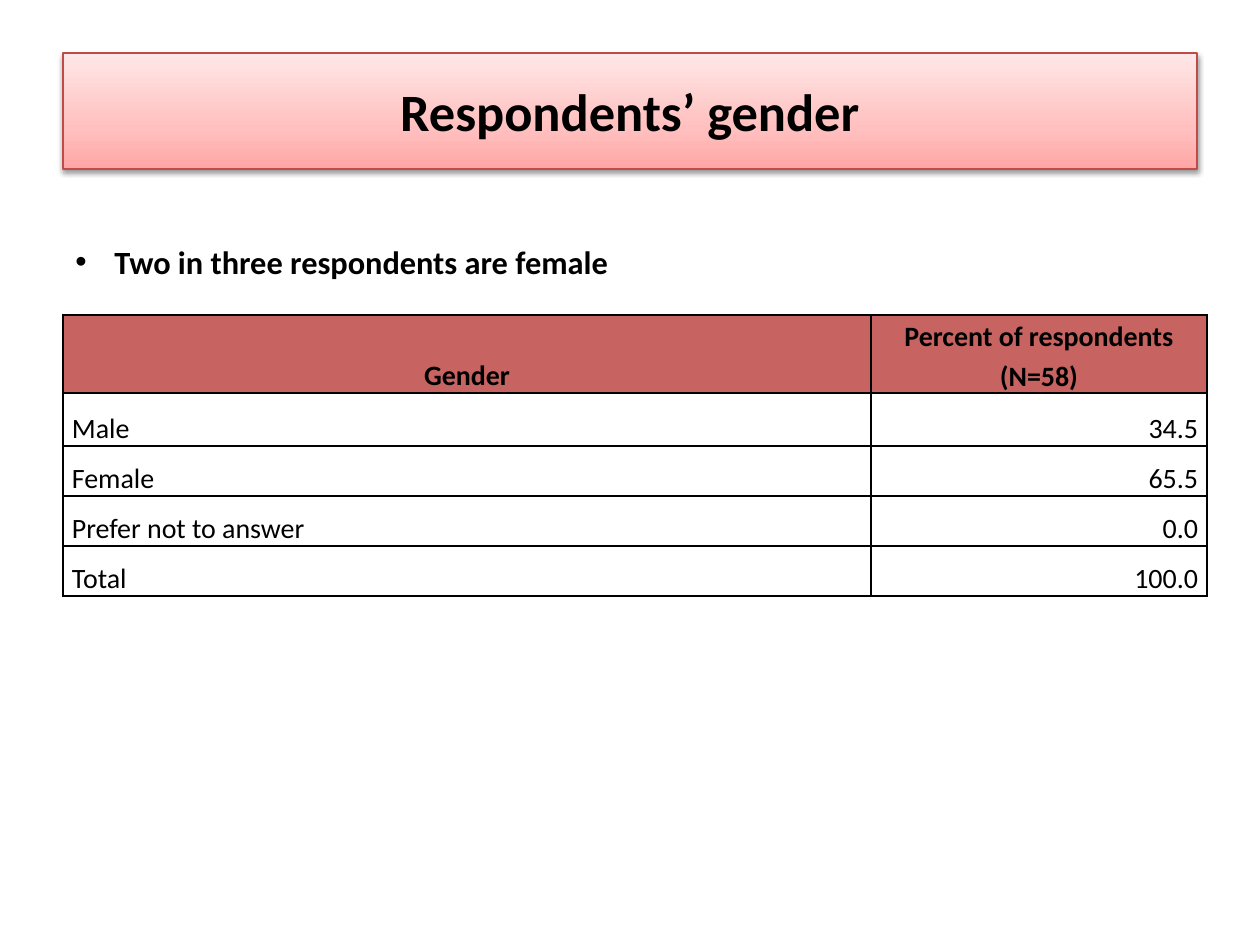
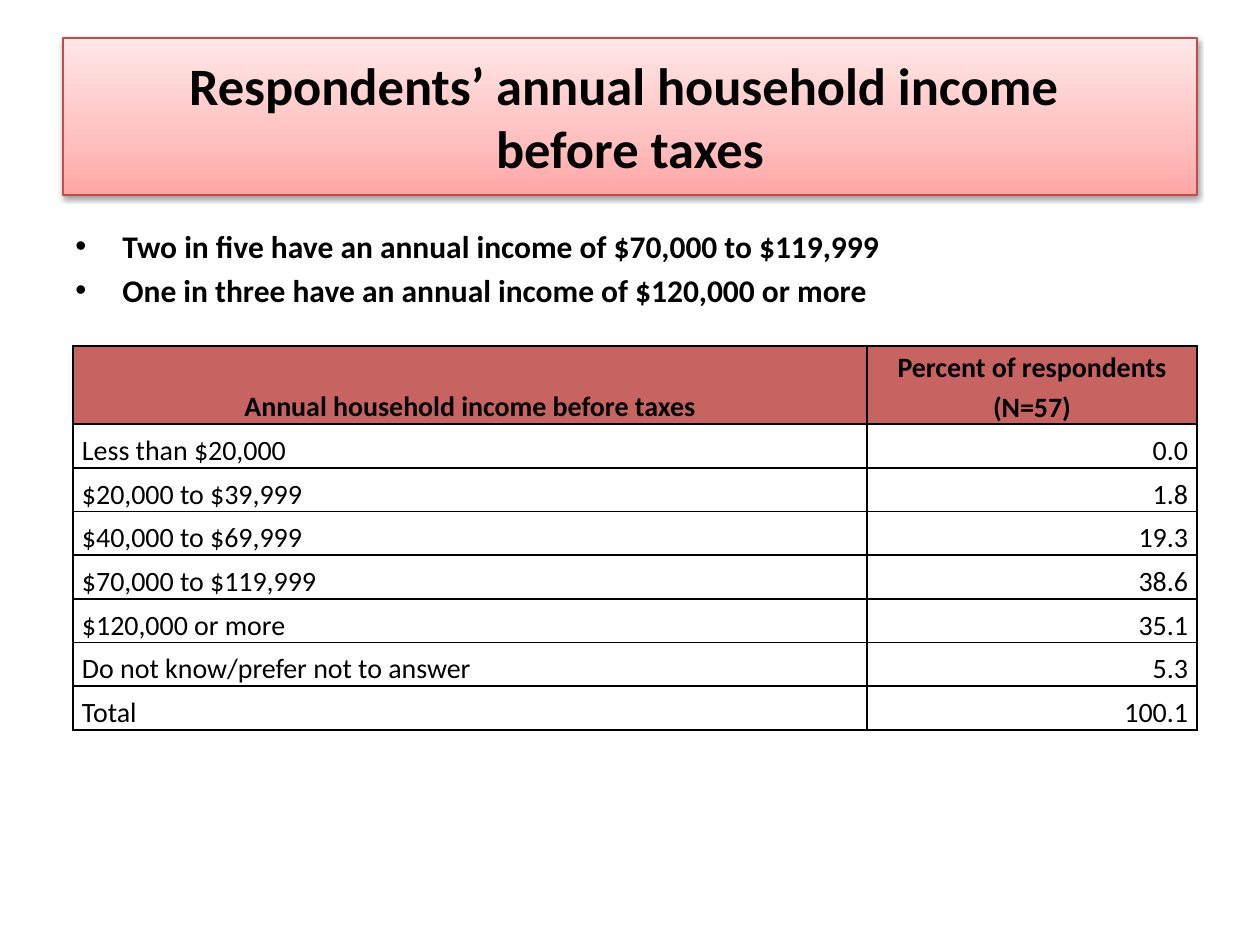
from lxml.etree import SubElement
from pptx import Presentation
from pptx.dml.color import RGBColor
from pptx.enum.text import MSO_ANCHOR, MSO_AUTO_SIZE, PP_ALIGN
from pptx.oxml.ns import qn
from pptx.util import Emu, Pt

COLORS = {
    "text": "000000",
    "page": "FFFFFF",
    "band_line": "BF4C48",
    "header": "C76361",
    "grid": "000000",
}
BAND_STOPS = [(0, "FFA6A5"), (35, "FFC0BF"), (100, "FFE7E7")]
FONT = "Calibri"
TITLE_ONLY = 5
HEADER_HEIGHT = 78


def px(length):
    """Turn px at 126 to the inch into EMU."""
    return Emu(round(length * 914400 / 126))


def color(name):
    return RGBColor.from_string(COLORS[name])


def add_element(parent, tag, **attributes):
    values = {key: str(value) for key, value in attributes.items()}
    return SubElement(parent, qn(tag), values)


def set_font(para, size, bold=False):
    para.font.name = FONT
    para.font.size = Pt(size)
    para.font.bold = bold
    para.font.color.rgb = color("text")


def style_band(shape):
    """Red gradient, thin outline and soft shadow below."""
    shape.fill.gradient()
    shape.fill.gradient_angle = 90
    properties = shape.element.spPr
    stops = properties.find(".//" + qn("a:gsLst"))
    for stop in list(stops):
        stops.remove(stop)
    for position, value in BAND_STOPS:
        stop = add_element(stops, "a:gs", pos=position * 1000)
        add_element(stop, "a:srgbClr", val=value)
    shape.line.color.rgb = color("band_line")
    shape.line.width = Pt(0.75)
    effects = add_element(properties, "a:effectLst")
    shadow = add_element(effects, "a:outerShdw", blurRad=Pt(3.1), dist=Pt(1.6),
                         dir=90 * 60000, rotWithShape=0)
    tint = add_element(shadow, "a:srgbClr", val="000000")
    add_element(tint, "a:alpha", val=38000)


def place_title(page, box, lines):
    title = page.shapes.title
    title.left, title.top, title.width, title.height = map(px, box)
    style_band(title)
    frame = title.text_frame
    frame.word_wrap = True
    frame.auto_size = MSO_AUTO_SIZE.NONE
    frame.vertical_anchor = MSO_ANCHOR.MIDDLE
    para = frame.paragraphs[0]
    para.alignment = PP_ALIGN.CENTER
    for index, line in enumerate(lines):
        if index:
            para.add_line_break()
        para.add_run().text = line
    set_font(para, 30, bold=True)


def place_findings(page, box, findings, size, indent, top_inset):
    text_box = page.shapes.add_textbox(*map(px, box))
    text_box.fill.solid()
    text_box.fill.fore_color.rgb = color("page")
    text_box.line.color.rgb = color("page")
    text_box.line.width = Pt(2)
    frame = text_box.text_frame
    frame.word_wrap = True
    frame.margin_top = px(top_inset)
    for index, finding in enumerate(findings):
        para = frame.add_paragraph() if index else frame.paragraphs[0]
        para.text = finding
        para.space_before = Pt(size * 0.2)
        set_font(para, size, bold=True)
        properties = para._p.get_or_add_pPr()
        properties.set("marL", str(px(indent)))
        properties.set("indent", str(-px(indent)))
        bullet_font = properties.makeelement(qn("a:buFont"), {"typeface": "Arial"})
        bullet = properties.makeelement(qn("a:buChar"), {"char": "•"})
        defaults = properties.find(qn("a:defRPr"))
        defaults.addprevious(bullet_font)
        defaults.addprevious(bullet)


def style_cell(cell, text, alignment, is_header):
    cell.margin_left = cell.margin_right = px(9)
    cell.margin_top = cell.margin_bottom = 0
    cell.vertical_anchor = MSO_ANCHOR.BOTTOM
    para = cell.text_frame.paragraphs[0]
    para.text = text
    para.alignment = alignment
    para.line_spacing = 1.15
    set_font(para, 16, bold=is_header)
    # Borders come before the fill in the cell properties
    properties = cell._tc.get_or_add_tcPr()
    for side in ("a:lnL", "a:lnR", "a:lnT", "a:lnB"):
        line = add_element(properties, side, w=Pt(1))
        fill = add_element(line, "a:solidFill")
        add_element(fill, "a:srgbClr", val=COLORS["grid"])
    if is_header:
        cell.fill.solid()
        cell.fill.fore_color.rgb = color("header")
    else:
        cell.fill.background()


def place_table(page, box, label_width, first_row_height, rows):
    height = box[3]
    other_height = (height - HEADER_HEIGHT - first_row_height) / (len(rows) - 2)
    table = page.shapes.add_table(len(rows), 2, *map(px, box)).table
    table.first_row = table.horz_banding = False
    table.columns[0].width = px(label_width)
    table.columns[1].width = px(box[2] - label_width)
    for index, row in enumerate(rows):
        heights = (HEADER_HEIGHT, first_row_height)
        table.rows[index].height = px(heights[index] if index < 2 else other_height)
        for column, text in enumerate(row):
            alignment = (PP_ALIGN.LEFT, PP_ALIGN.RIGHT)[column] if index else PP_ALIGN.CENTER
            style_cell(table.cell(index, column), text, alignment, index == 0)


def add_gender_page(deck):
    page = deck.slides.add_slide(deck.slide_layouts[TITLE_ONLY])
    place_title(page, (63, 53, 1134, 116), ["Respondents’ gender"])
    place_findings(page, (63, 189, 903, 95), ["Two in three respondents are female"],
                   size=18.5, indent=39, top_inset=53)
    place_table(page, (63, 315, 1144, 281), 808, 53, [
        ("Gender", "Percent of respondents (N=58)"),
        ("Male", "34.5"),
        ("Female", "65.5"),
        ("Prefer not to answer", "0.0"),
        ("Total", "100.0"),
    ])


def add_income_page(deck):
    page = deck.slides.add_slide(deck.slide_layouts[TITLE_ONLY])
    place_title(page, (63, 38, 1134, 157),
                ["Respondents’ annual household income ", "before taxes"])
    place_findings(page, (63, 221, 914, 136), [
        "Two in five have an annual income of $70,000 to $119,999",
        "One in three have an annual income of $120,000 or more",
    ], size=18, indent=47, top_inset=6)
    place_table(page, (73, 346, 1124, 384), 794, 44, [
        ("Annual household income before taxes", "Percent of respondents (N=57)"),
        ("Less than $20,000", "0.0"),
        ("$20,000 to $39,999", "1.8"),
        ("$40,000 to $69,999", "19.3"),
        ("$70,000 to $119,999", "38.6"),
        ("$120,000 or more", "35.1"),
        ("Do not know/prefer not to answer", "5.3"),
        ("Total", "100.1"),
    ])


def main():
    deck = Presentation()
    deck.slide_width, deck.slide_height = px(1260), px(945)
    add_gender_page(deck)
    add_income_page(deck)
    deck.save("out.pptx")


if __name__ == "__main__":
    main()
